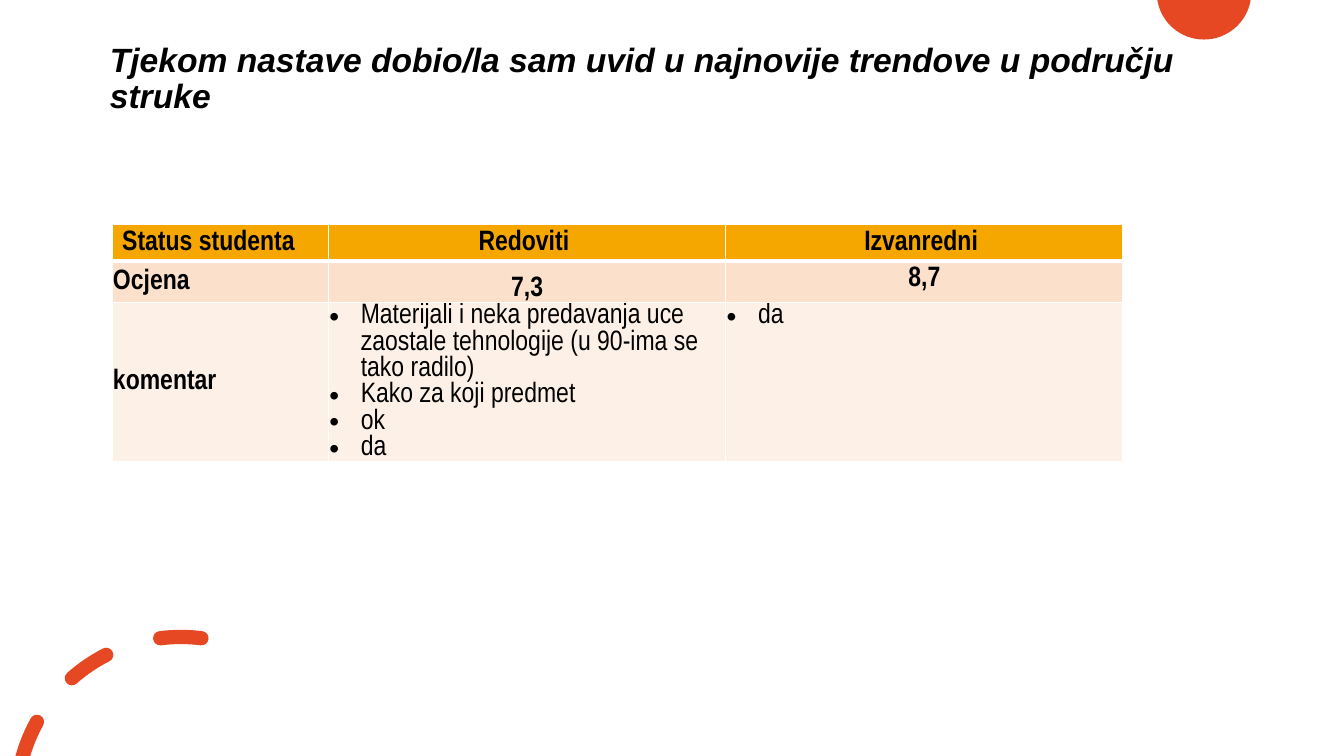
from dataclasses import dataclass
from itertools import chain
from math import acos, cos, degrees, radians, sin, tan

from lxml import etree
from pptx import Presentation
from pptx import util as u
from pptx.dml.color import RGBColor
from pptx.enum import text
from pptx.oxml.ns import qn

Point = tuple[float, float]
PAGE_WIDTH, PAGE_HEIGHT = 960, 540
LEFT, CENTER = text.PP_ALIGN.LEFT, text.PP_ALIGN.CENTER
TOP, MIDDLE, BOTTOM = (text.MSO_ANCHOR.TOP, text.MSO_ANCHOR.MIDDLE,
                       text.MSO_ANCHOR.BOTTOM)


@dataclass(frozen=True)
class Theme:
    accent: str = "E64823"
    ink: str = "000000"
    line: str = "FFFFFF"
    row_fills: tuple[str, ...] = ("F5A700", "FBE1CC", "FDF1E7")
    title_font: str = "Arial"
    title_size: float = 24
    table_font: str = "Arial Narrow"
    table_size: float = 20
    thin: float = 1
    thick: float = 3


@dataclass(frozen=True)
class CellText:
    lines: tuple[str, ...]
    align: text.PP_ALIGN = LEFT
    anchor: text.MSO_ANCHOR = MIDDLE
    tight: bool = True
    bullets: bool = False


@dataclass(frozen=True)
class Dash:
    start: float | None  # degrees clockwise from the top, None at the page edge
    end: float


THEME = Theme()

# Table content
ROWS = (
    (CellText(("Status studenta",), tight=False),
     CellText(("Redoviti ",), CENTER, tight=False),
     CellText(("Izvanredni ",), CENTER, tight=False)),
    (CellText(("Ocjena",)),
     CellText(("7,3",), CENTER, BOTTOM),
     CellText(("8,7",), CENTER, TOP, tight=False)),
    (CellText(("komentar",)),
     CellText(("Materijali i neka predavanja uce zaostale tehnologije "
               "(u 90-ima se tako radilo)",
               "Kako za koji predmet", "ok", "da"), anchor=TOP, bullets=True),
     CellText(("da",), anchor=TOP, bullets=True)),
)
COLUMN_WIDTHS = (154.5, 283.8, 283.8)
ROW_HEIGHTS = (25.7, 29.5, 113.5)

# Corner decoration
DISC_CENTER, DISC_RADIUS = (860, -5.5), 33.8
RING_CENTER, RING_RADIUS, DASH_HALF = (129.2, 572.4), 117.4, 5.1
DASHES = (Dash(None, -61.1), Dash(-41.5, -27), Dash(-7.2, 7.2))


def apply_format(target: object, values: dict[str, object]) -> None:
    for name, value in values.items():
        setattr(target, name, value)


def format_font(font, name: str, size: float, bold: bool, italic: bool) -> None:
    apply_format(font, {"name": name, "size": u.Pt(size),
                        "bold": bold, "italic": italic})
    font.color.rgb = RGBColor.from_string(THEME.ink)


def polar(center: Point, radius: float, angle: float) -> Point:
    a = radians(angle)
    return center[0] + radius * sin(a), center[1] - radius * cos(a)


def arc(center: Point, radius: float, start: float, end: float,
        pieces: int = 1) -> list[Point]:
    """Bezier points of an arc: two controls and an end for each piece."""
    points = []
    step = (end - start) / pieces
    pull = 4 / 3 * tan(radians(step) / 4) * radius
    for i in range(pieces):
        a, b = start + i * step, start + (i + 1) * step
        points += [polar(polar(center, radius, a), pull, a + 90),
                   polar(polar(center, radius, b), -pull, b + 90),
                   polar(center, radius, b)]
    return points


def dash_contour(dash: Dash) -> list[Point]:
    """A bent bar with round ends, or a flat one at the lower page edge."""
    outer, inner = RING_RADIUS + DASH_HALF, RING_RADIUS - DASH_HALF
    cut = dash.start is None
    depth = RING_CENTER[1] - PAGE_HEIGHT
    outer_start, inner_start = (
        -degrees(acos(depth / radius)) if cut else dash.start
        for radius in (outer, inner))
    points = [polar(RING_CENTER, outer, outer_start)]
    points += arc(RING_CENTER, outer, outer_start, dash.end)
    points += arc(polar(RING_CENTER, RING_RADIUS, dash.end), DASH_HALF,
                  dash.end, dash.end + 180, 2)
    points += arc(RING_CENTER, inner, dash.end, inner_start)
    if not cut:
        points += arc(polar(RING_CENTER, RING_RADIUS, dash.start), DASH_HALF,
                      dash.start + 180, dash.start + 360, 2)
    return points


def draw_curves(page, contours: list[list[Point]]) -> None:
    first, *others = [[(u.Pt(x), u.Pt(y)) for x, y in contour]
                      for contour in contours]
    builder = page.shapes.build_freeform(*first[0])
    builder.add_line_segments(first[1:], close=True)
    for contour in others:
        builder.move_to(*contour[0])
        builder.add_line_segments(contour[1:], close=True)
    shape = builder.convert_to_shape()
    # Join each three line ends into one curve
    lines = list(shape._element.iter(qn("a:lnTo")))
    for trio in zip(*[iter(lines)] * 3):
        curve = etree.Element(qn("a:cubicBezTo"))
        trio[0].addprevious(curve)
        curve.extend(list(chain.from_iterable(trio)))
        for line in trio:
            line.getparent().remove(line)
    shape.shadow.inherit = False
    shape.fill.solid()
    shape.fill.fore_color.rgb = RGBColor.from_string(THEME.accent)
    shape.line.fill.background()


def draw_title(page, words: str) -> None:
    title = page.shapes.title
    apply_format(title, {"left": u.Pt(71.3), "top": u.Pt(16),
                         "width": u.Pt(828), "height": u.Pt(81.4)})
    box = title.text_frame
    apply_format(box, {"word_wrap": True, "vertical_anchor": MIDDLE,
                       "auto_size": text.MSO_AUTO_SIZE.NONE})
    para = box.paragraphs[0]
    apply_format(para, {"alignment": LEFT, "line_spacing": 0.9})
    span = para.add_run()
    span.text = words
    format_font(span.font, THEME.title_font, THEME.title_size, True, True)


def add_bullet(para) -> None:
    properties = para._p.get_or_add_pPr()
    properties.set("marL", str(u.Pt(22.5)))
    properties.set("indent", str(-u.Pt(22.5)))
    etree.SubElement(properties, qn("a:buFont"), typeface="Arial")
    etree.SubElement(properties, qn("a:buChar"), char="•")


def add_borders(cell, top: float, bottom: float) -> None:
    properties = cell._tc.get_or_add_tcPr()
    widths = {"lnL": THEME.thin, "lnR": THEME.thin, "lnT": top, "lnB": bottom}
    for index, (side, width) in enumerate(widths.items()):
        border = etree.Element(qn(f"a:{side}"), w=str(u.Pt(width)))
        fill = etree.SubElement(border, qn("a:solidFill"))
        etree.SubElement(fill, qn("a:srgbClr"), val=THEME.line)
        properties.insert(index, border)


def fill_cell(cell, content: CellText, fill: str) -> None:
    cell.fill.solid()
    cell.fill.fore_color.rgb = RGBColor.from_string(fill)
    cell.vertical_anchor = content.anchor
    if content.tight:
        apply_format(cell, {"margin_left": u.Pt(0.6), "margin_right": u.Pt(0.6),
                            "margin_top": u.Pt(0.6), "margin_bottom": u.Pt(0)})
    box = cell.text_frame
    for index, line in enumerate(content.lines):
        para = box.add_paragraph() if index else box.paragraphs[0]
        para.alignment = content.align
        if content.bullets:
            add_bullet(para)
        span = para.add_run()
        span.text = line
        format_font(span.font, THEME.table_font, THEME.table_size,
                    not content.bullets, False)


def draw_table(page) -> None:
    table = page.shapes.add_table(
        len(ROWS), len(COLUMN_WIDTHS), u.Pt(80.1), u.Pt(160.5),
        u.Pt(sum(COLUMN_WIDTHS)), u.Pt(sum(ROW_HEIGHTS))).table
    apply_format(table, {"first_row": False, "horz_banding": False})
    for column, width in zip(table.columns, COLUMN_WIDTHS):
        column.width = u.Pt(width)
    for r, (row, height) in enumerate(zip(ROWS, ROW_HEIGHTS)):
        table.rows[r].height = u.Pt(height)
        for c, content in enumerate(row):
            cell = table.cell(r, c)
            fill_cell(cell, content, THEME.row_fills[r])
            add_borders(cell, top=THEME.thick if r == 1 else THEME.thin,
                        bottom=THEME.thick if r == 0 else THEME.thin)


def main() -> None:
    deck = Presentation()
    apply_format(deck, {"slide_width": u.Pt(PAGE_WIDTH),
                        "slide_height": u.Pt(PAGE_HEIGHT)})
    page = deck.slides.add_slide(deck.slide_layouts.get_by_name("Title Only"))

    # Disc cut by the upper edge, and the dashed ring
    edge = degrees(acos(DISC_CENTER[1] / DISC_RADIUS))
    draw_curves(page, [[polar(DISC_CENTER, DISC_RADIUS, edge)]
                       + arc(DISC_CENTER, DISC_RADIUS, edge, 360 - edge, 2)])
    draw_curves(page, [dash_contour(dash) for dash in DASHES])

    # Title and survey results
    draw_title(page, "Tjekom nastave dobio/la sam uvid u najnovije trendove "
                     "u području struke")
    draw_table(page)
    deck.save("out.pptx")


if __name__ == "__main__":
    main()
